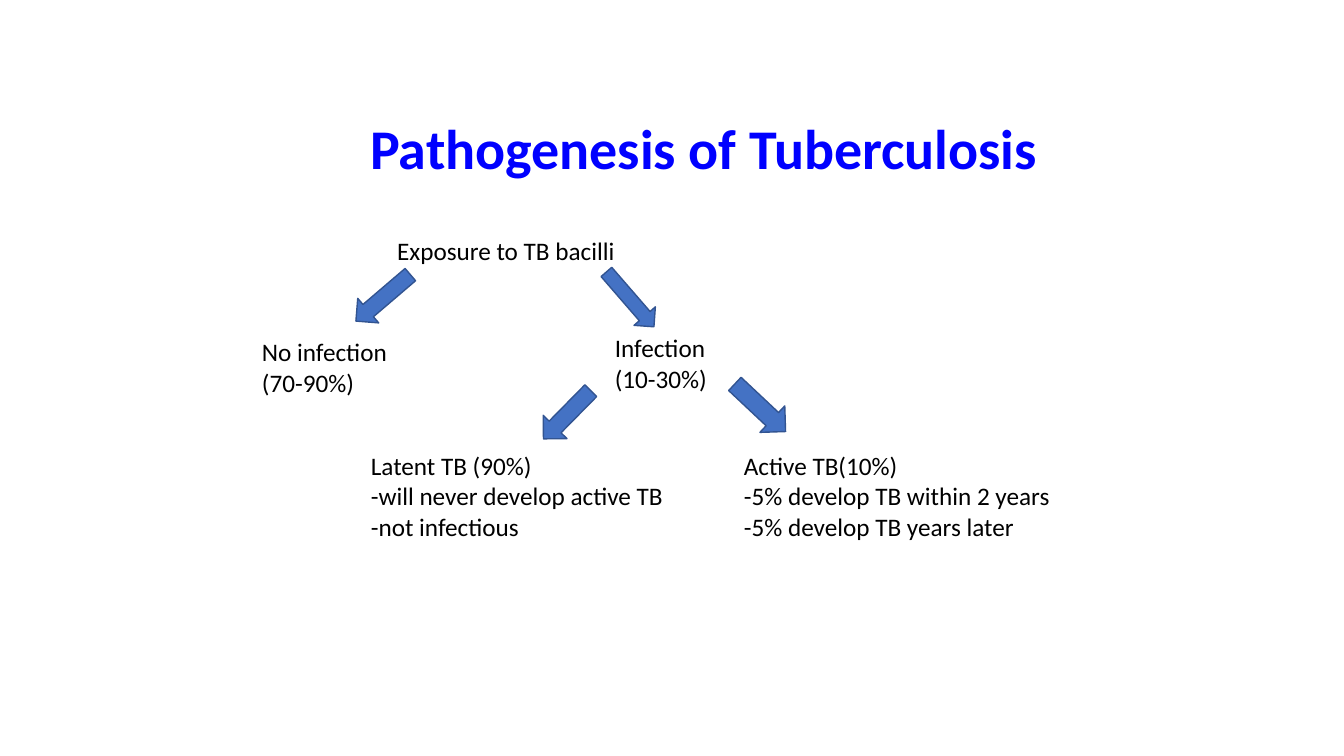
from pptx import Presentation
from pptx.dml.color import RGBColor
from pptx.enum.shapes import MSO_SHAPE
from pptx.enum.text import MSO_ANCHOR, MSO_AUTO_SIZE, PP_ALIGN
from pptx.util import Inches, Pt

TITLE_BLUE = RGBColor(0x00, 0x00, 0xFF)
BLACK = RGBColor(0x00, 0x00, 0x00)
ARROW_FILL = RGBColor(0x44, 0x72, 0xC4)
ARROW_LINE = RGBColor(0x32, 0x54, 0x91)

STAGES = [
    ((3.84, 2.29, 2.42, 0.4), ["Exposure to TB bacilli"]),
    ((2.5, 3.29, 1.5, 0.71), ["No infection (70-90%)"]),
    ((6, 3.25, 1.33, 0.71), ["Infection (10-30%)"]),
    ((3.58, 4.42, 3.34, 1.01),
     ["Latent TB (90%)", "-will never develop active TB", "-not infectious"]),
    ((7.28, 4.42, 3.47, 1.01),
     ["Active TB(10%)", "-5% develop TB within 2 years", "-5% develop TB years later"]),
]
ARROWS = [
    ((3.64, 2.6, 0.32, 0.71), 49.5),
    ((6.11, 2.61, 0.28, 0.72), 319.1),
    ((5.46, 3.78, 0.33, 0.67), 44.5),
    ((7.36, 3.7, 0.36, 0.69), 313.2),
]


class FlowSlide:
    font_name = "Calibri"

    def __init__(self, deck):
        self.page = deck.slides.add_slide(deck.slide_layouts[5])

    def style(self, frame, size, color, bold=False):
        for para in frame.paragraphs:
            for span in para.runs:
                font = span.font
                font.name, font.size, font.bold = self.font_name, Pt(size), bold
                font.color.rgb = color

    def title(self, place, text):
        box = self.page.shapes.title
        box.left, box.top, box.width, box.height = map(Inches, place)
        frame = box.text_frame
        frame.text = text
        frame.word_wrap = False
        frame.auto_size = MSO_AUTO_SIZE.NONE
        frame.vertical_anchor = MSO_ANCHOR.BOTTOM
        para = frame.paragraphs[0]
        para.alignment = PP_ALIGN.CENTER
        para.line_spacing = 0.9
        self.style(frame, 40, TITLE_BLUE, bold=True)

    def stage(self, place, lines):
        frame = self.page.shapes.add_textbox(*map(Inches, place)).text_frame
        frame.word_wrap = True
        frame.auto_size = MSO_AUTO_SIZE.SHAPE_TO_FIT_TEXT
        frame.text = "\n".join(lines)
        self.style(frame, 18, BLACK)

    def arrow(self, place, angle):
        shape = self.page.shapes.add_shape(MSO_SHAPE.DOWN_ARROW, *map(Inches, place))
        shape.rotation = angle
        shape.shadow.inherit = False
        shape.fill.solid()
        shape.fill.fore_color.rgb = ARROW_FILL
        shape.line.color.rgb = ARROW_LINE
        shape.line.width = Pt(1)


def main():
    deck = Presentation()
    deck.slide_width, deck.slide_height = Inches(13.33), Inches(7.5)
    flow = FlowSlide(deck)
    flow.title((1.94, 0.4, 10.08, 1.45), "Pathogenesis of Tuberculosis")
    for place, lines in STAGES:
        flow.stage(place, lines)
    for place, angle in ARROWS:
        flow.arrow(place, angle)
    deck.save("out.pptx")


if __name__ == "__main__":
    main()
